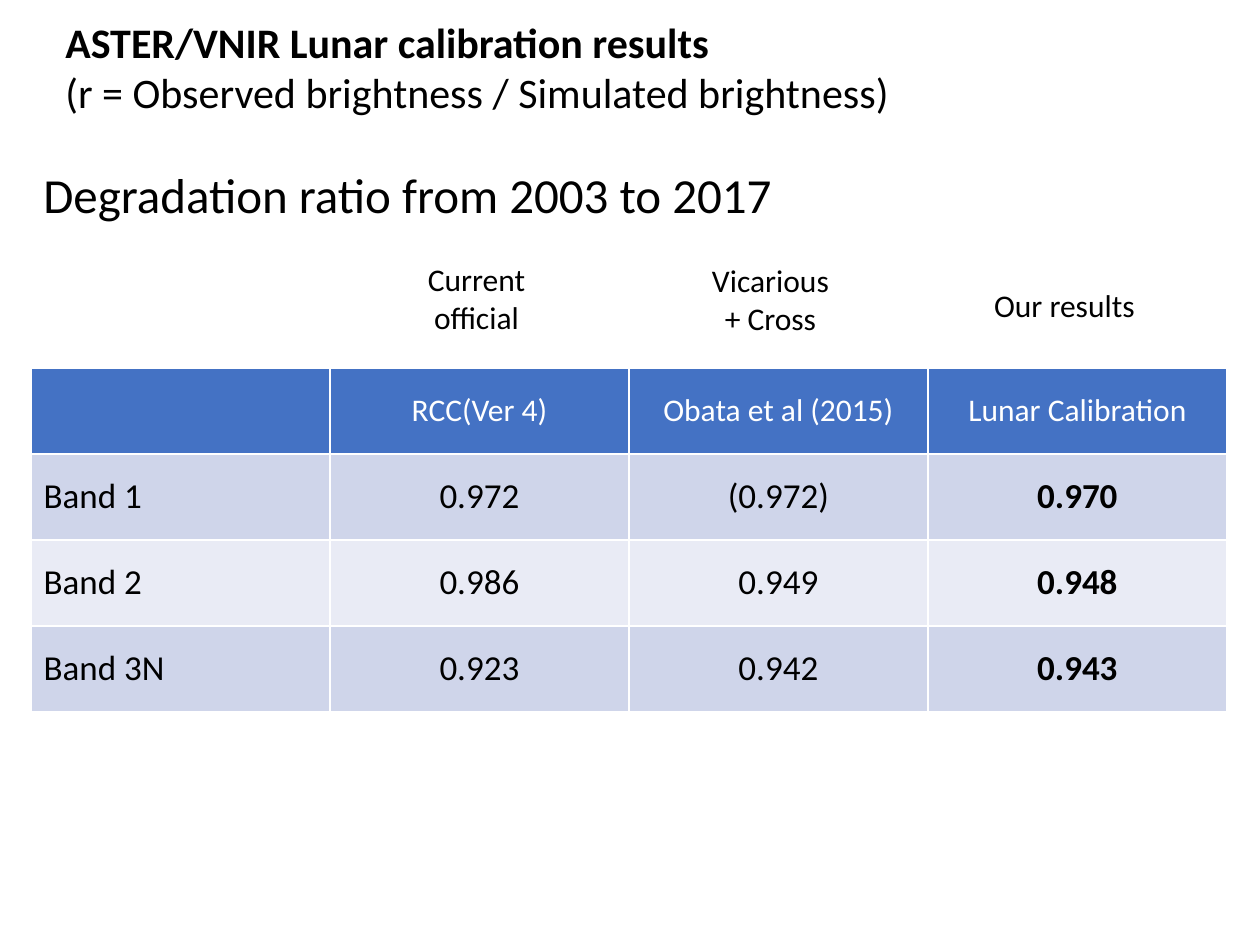
from dataclasses import dataclass

from lxml.etree import SubElement
from pptx import Presentation
from pptx.dml.color import RGBColor as Rgb
from pptx.enum.text import MSO_ANCHOR as Anchor, PP_ALIGN as Align
from pptx.oxml.ns import qn
from pptx.util import Emu, Pt

PX_PER_INCH = 126
EMU_PER_PX = 914400 / PX_PER_INCH


@dataclass(frozen=True)
class Theme:
    font: str = "Calibri"
    text: str = "000000"
    header_text: str = "FFFFFF"
    header_fill: str = "4472C4"
    band_fills: tuple[str, str] = ("CFD5EA", "E9EBF5")
    border: str = "FFFFFF"
    border_width: int = 1
    heading: int = 28
    title: int = 24
    body: int = 20
    caption: int = 18


@dataclass(frozen=True)
class Line:
    text: str
    size: int
    bold: bool = False
    align: Align = Align.LEFT
    color: str = Theme.text


@dataclass(frozen=True)
class Label:
    left: int
    top: int
    width: int
    height: int
    lines: tuple[Line, ...]


@dataclass(frozen=True)
class Grid:
    left: int
    top: int
    column_width: int
    row_height: int
    rows: tuple[tuple[str, ...], ...]


THEME = Theme()


def caption(left: int, top: int, height: int, *texts: str) -> Label:
    lines = tuple(Line(text, THEME.caption, align=Align.CENTER) for text in texts)
    return Label(left, top, 237, height, lines)


LABELS = (
    Label(53, 10, 1154, 115, (
        Line("ASTER/VNIR Lunar calibration results", THEME.title, bold=True),
        Line("(r = Observed brightness / Simulated brightness)", THEME.title),
    )),
    Label(31, 158, 886, 72, (
        Line("Degradation ratio from 2003 to 2017", THEME.heading),
    )),
    caption(358, 254, 90, "Current", "official"),
    caption(652, 255, 90, "Vicarious", "+ Cross"),
    caption(946, 280, 52, "Our results"),
)

RATIOS = Grid(31, 368, 299, 86, (
    ("", "RCC(Ver 4)", "Obata et al (2015)", "Lunar Calibration"),
    ("Band 1", "0.972", "(0.972)", "0.970"),
    ("Band 2", "0.986", "0.949", "0.948"),
    ("Band 3N", "0.923", "0.942", "0.943"),
))


def px(length: int) -> Emu:
    return Emu(round(length * EMU_PER_PX))


def write_line(para, line: Line) -> None:
    para.text = line.text
    para.alignment = line.align
    para.font.name = THEME.font
    para.font.size = Pt(line.size)
    para.font.bold = line.bold
    para.font.color.rgb = Rgb.from_string(line.color)


def draw_label(page, label: Label) -> None:
    box = page.shapes.add_textbox(
        px(label.left), px(label.top), px(label.width), px(label.height))
    frame = box.text_frame
    frame.word_wrap = True
    for index, line in enumerate(label.lines):
        para = frame.add_paragraph() if index else frame.paragraphs[0]
        write_line(para, line)


def draw_borders(cell) -> None:
    properties = cell._tc.get_or_add_tcPr()
    for side in ("lnL", "lnR", "lnT", "lnB"):
        border = SubElement(
            properties, qn(f"a:{side}"), w=str(Pt(THEME.border_width)))
        fill = SubElement(border, qn("a:solidFill"))
        SubElement(fill, qn("a:srgbClr"), val=THEME.border)


def cell_line(text: str, row: int, column: int, last_column: int) -> Line:
    if row == 0:
        return Line(text, THEME.caption, align=Align.CENTER,
                    color=THEME.header_text)
    align = Align.CENTER if column else Align.LEFT
    return Line(text, THEME.body, column == last_column, align)


def draw_grid(page, grid: Grid) -> None:
    row_count, column_count = len(grid.rows), len(grid.rows[0])
    table = page.shapes.add_table(
        row_count, column_count, px(grid.left), px(grid.top),
        px(grid.column_width * column_count),
        px(grid.row_height * row_count)).table
    for row, texts in enumerate(grid.rows):
        color = THEME.band_fills[(row - 1) % 2] if row else THEME.header_fill
        for column, text in enumerate(texts):
            cell = table.cell(row, column)
            draw_borders(cell)
            cell.fill.solid()
            cell.fill.fore_color.rgb = Rgb.from_string(color)
            cell.vertical_anchor = Anchor.MIDDLE
            line = cell_line(text, row, column, column_count - 1)
            write_line(cell.text_frame.paragraphs[0], line)


def main() -> None:
    deck = Presentation()
    deck.slide_width, deck.slide_height = px(1260), px(945)
    page = deck.slides.add_slide(deck.slide_layouts[6])
    draw_grid(page, RATIOS)
    for label in LABELS:
        draw_label(page, label)
    deck.save("out.pptx")


if __name__ == "__main__":
    main()
